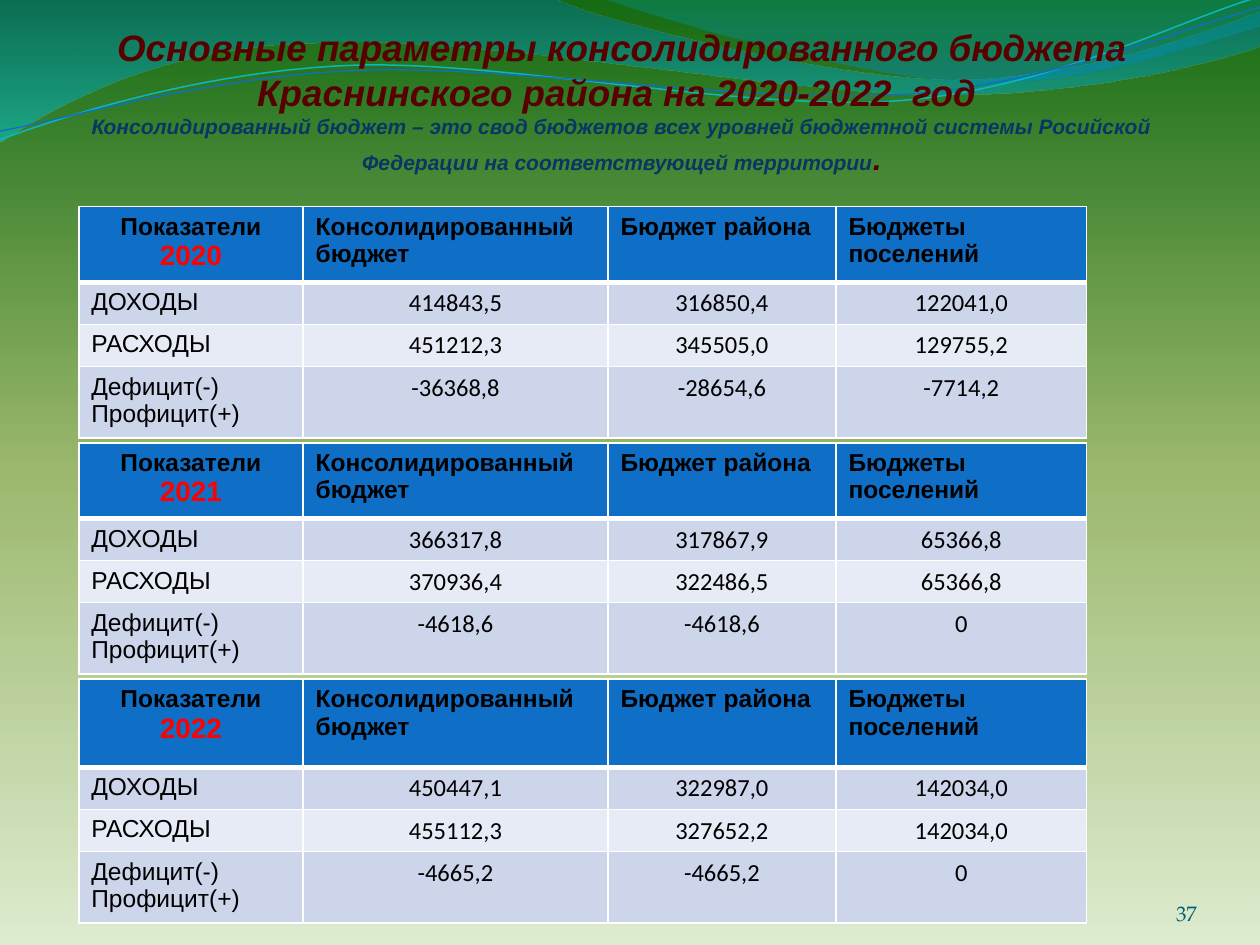
from lxml.etree import SubElement as add_node
from pptx import Presentation
from pptx.dml.color import RGBColor as RGB
from pptx.enum.text import MSO_ANCHOR as ANCHOR, PP_ALIGN as ALIGN
from pptx.oxml.ns import qn
from pptx.util import Inches, Pt

COLORS = {
    "maroon": "580000", "navy": "083763", "teal": "045D75",
    "black": "000000", "red": "FF0000", "white": "FFFFFF",
    "header": "0F6FC6", "band": "CCD5EA", "light": "E7EBF5",
    "cyan": "0AB8BF", "blue": "0F6FC6",
    "leaf": "DDEBCF", "grass": "9CB86E", "forest": "156B13",
    "sea": "0074A1", "aqua": "00C6CF", "lagoon": "00A1A9", "sky": "008BBF",
}


def add_span(para, text, size, color, font="Arial", bold=False, italic=False):
    span = para.add_run()
    span.text = text
    span.font.size, span.font.name = Pt(size), font
    span.font.bold, span.font.italic = bold, italic
    span.font.color.rgb = RGB.from_string(COLORS[color])


def set_gradient(fill, element, angle, stops):
    fill.gradient()
    fill.gradient_angle = angle
    stop_list = next(element.iter(qn("a:gsLst")))
    for old in list(stop_list):
        stop_list.remove(old)
    for place, color, opacity in stops:
        stop = add_node(stop_list, qn("a:gs"), pos=str(place * 1000))
        tint = add_node(stop, qn("a:srgbClr"), val=COLORS[color])
        if opacity < 100:
            add_node(tint, qn("a:alpha"), val=str(opacity * 1000))


# Slide on a grid of 10 columns by 7.5 rows
deck = Presentation()
deck.slide_width, deck.slide_height = Inches(10), Inches(7.5)
CELL = deck.slide_width / 10
LEFT = 10 / 16
page = deck.slides.add_slide(deck.slide_layouts[6])
set_gradient(page.background.fill, page.element, 90,
             [(0, "leaf", 100), (50, "grass", 100), (100, "forest", 100)])

# Waves: pairs are straight steps, sixes are cubic curves
waves = [
    ([(0, -0.01), (4.4, -0.01), (4.76, 0.17, 6.64, 0.63, 7.58, 0.63),
      (8.53, 0.63, 9.58, 0.26, 10, 0.09), (10.01, 0.36),
      (9.83, 0.44, 8.7, 0.76, 7.46, 0.75), (6.22, 0.75, 3.82, 0.28, 2.57, 0.34),
      (1.29, 0.35, 0.46, 0.83, -0.01, 1.13), (0, -0.01)],
     [(0, "sea", 45), (100, "aqua", 55)], None, 0),
    ([(4.79, -0.01), (5.09, 0.11, 6.82, 0.62, 7.69, 0.65),
      (8.56, 0.69, 9.61, 0.32, 10, 0.21), (10, 0), (4.79, -0.01)],
     [(0, "lagoon", 30), (80, "sky", 45)], None, 0),
    ([(0, 1.11), (0.48, 0.93, 1.58, 0.57, 2.77, 0.52),
      (3.95, 0.47, 5.93, 0.89, 7.13, 0.8), (8.33, 0.71, 9.38, 0.15, 9.98, -0.02)],
     None, "cyan", 0.85),
    ([(0, 1.04), (0.47, 0.96, 1.64, 0.61, 2.83, 0.56),
      (4.03, 0.51, 5.97, 0.83, 7.17, 0.75), (8.36, 0.67, 9.41, 0.21, 10, 0.06)],
     None, "blue", 0.75),
]
for outline, stops, line_color, line_width in waves:
    spots = [(round(segment[i] * CELL), round(segment[i + 1] * CELL))
             for segment in outline for i in range(0, len(segment), 2)]
    builder = page.shapes.build_freeform(*spots[0])
    builder.add_line_segments(spots[1:], close=stops is not None)
    wave = builder.convert_to_shape()
    wave.shadow.inherit = False

    # Join each three steps of a cubic segment into one curve
    steps = wave.element.iter(qn("a:lnTo"))
    steps = iter(list(steps))
    for segment in outline[1:]:
        group = [next(steps) for _ in range(len(segment) // 2)]
        if len(group) == 3:
            group[0].tag
            curve = add_node(group[0].getparent(), qn("a:cubicBezTo"))
            group[0].addprevious(curve)
            for step in group:
                curve.append(step[0])
                step.getparent().remove(step)

    if stops:
        set_gradient(wave.fill, wave.element, 270, stops)
        wave.line.fill.background()
    else:
        wave.fill.background()
        wave.line.color.rgb = RGB.from_string(COLORS[line_color])
        wave.line.width = Pt(line_width)

# Title and slide number: left, top, width, height, top inset, alignment, paragraphs
title_look = dict(bold=True, italic=True)
texts = [
    (LEFT, 0, 8.62, 1.4, 0.05, ALIGN.CENTER, title_look, [
        [("Основные параметры консолидированного бюджета", 21, "maroon")],
        [("Краснинского района на 2020-2022  год ", 21, "maroon")],
        [("Консолидированный бюджет – это свод бюджетов всех уровней бюджетной "
          "системы Росийской Федерации на соответствующей территории", 12, "navy"),
         (".", 18, "maroon")]]),
    (8.67, 6.95, 0.83, 0.4, 0, ALIGN.RIGHT, dict(font="TeX Gyre Pagella"),
     [[("37", 12, "teal")]]),
]
for left, top, width, height, inset, align, look, paras in texts:
    box = page.shapes.add_textbox(*(round(v * CELL) for v in (left, top, width, height)))
    frame = box.text_frame
    frame.word_wrap, frame.vertical_anchor = True, ANCHOR.BOTTOM
    frame.margin_left = frame.margin_right = frame.margin_bottom = 0
    frame.margin_top = round(inset * CELL)
    for number, spans in enumerate(paras):
        para = frame.add_paragraph() if number else frame.paragraphs[0]
        para.alignment = align
        for text, size, color in spans:
            add_span(para, text, size, color, **look)

# Budget tables, one per year, a quarter of the slide apart
headings = ["Консолидированный  бюджет", "Бюджет района", "Бюджеты поселений"]
labels = [["ДОХОДЫ"], ["РАСХОДЫ"], ["Дефицит(-)", "Профицит(+)"]]
budgets = {
    "2020": [["414843,5", "316850,4", "122041,0"],
             ["451212,3", "345505,0", "129755,2"],
             ["-36368,8", "-28654,6", "-7714,2"]],
    "2021": [["366317,8", "317867,9", "65366,8"],
             ["370936,4", "322486,5", "65366,8"],
             ["-4618,6", "-4618,6", "0"]],
    "2022": [["450447,1", "322987,0", "142034,0"],
             ["455112,3", "327652,2", "142034,0"],
             ["-4665,2", "-4665,2", "0"]],
}
column_widths = [1.78, 2.42, 1.81, 1.99]
row_fills = ["header", "band", "light", "band"]
for index, (year, values) in enumerate(budgets.items()):
    last = year == "2022"
    row_heights = [0.7 if last else 0.37, 0.25, 0.25, 0.4]
    table_height = round((1.94 if last else 1.83) * CELL)
    holder = page.shapes.add_table(
        4, 4, round(LEFT * CELL), round(1.64 * CELL + index * deck.slide_height / 4),
        round(sum(column_widths) * CELL), table_height)
    table = holder.table
    for column, width in zip(table.columns, column_widths):
        column.width = round(width * CELL)
    for row, height in zip(table.rows, row_heights):
        row.height = round(height * CELL)
    holder.height = table_height
    grid = [[["Показатели", year]] + [[heading] for heading in headings]]
    grid += [[label] + [[value] for value in line] for label, line in zip(labels, values)]

    for r, cells in enumerate(grid):
        for c, lines in enumerate(cells):
            cell = table.cell(r, c)
            # Borders go before the fill in the cell properties
            props = cell._tc.get_or_add_tcPr()
            for side in ("L", "R", "T", "B"):
                heavy = (r == 0 and side == "B") or (r == 1 and side == "T")
                edge = add_node(props, qn(f"a:ln{side}"), w=str(Pt(3 if heavy else 1)))
                paint = add_node(edge, qn("a:solidFill"))
                add_node(paint, qn("a:srgbClr"), val=COLORS["white"])
            cell.fill.solid()
            cell.fill.fore_color.rgb = RGB.from_string(COLORS[row_fills[r]])
            centred = (r == 0) == (c == 0)
            for number, text in enumerate(lines):
                frame = cell.text_frame
                para = frame.add_paragraph() if number else frame.paragraphs[0]
                para.alignment = ALIGN.CENTER if centred else ALIGN.LEFT
                is_year = text == year
                add_span(para, text, 16 if is_year else 14, "red" if is_year else "black",
                         font="Calibri" if r and c else "Arial", bold=r == 0)

deck.save("out.pptx")
